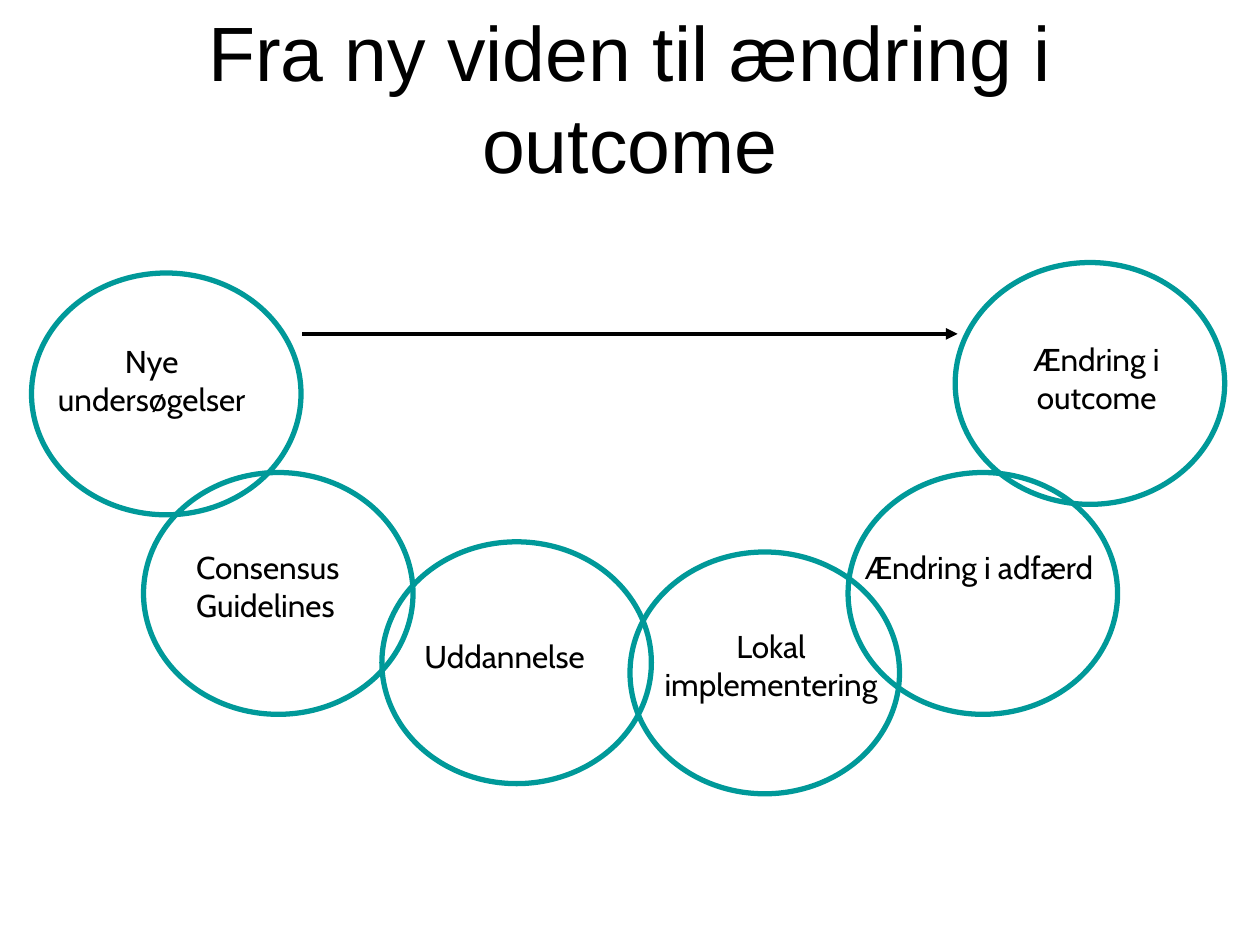
from dataclasses import dataclass

from lxml.etree import SubElement
from pptx import Presentation
from pptx.dml.color import RGBColor
from pptx.enum.shapes import MSO_CONNECTOR, MSO_SHAPE
from pptx.enum.text import MSO_ANCHOR, MSO_AUTO_SIZE, PP_ALIGN
from pptx.oxml.ns import qn
from pptx.util import Pt


@dataclass(frozen=True)
class Theme:
    ink: RGBColor = RGBColor(0x00, 0x00, 0x00)
    ring: RGBColor = RGBColor(0x00, 0x99, 0x99)
    paper: RGBColor = RGBColor(0xFF, 0xFF, 0xFF)
    title_font: str = "Arial"
    label_font: str = "Cabin"
    title_size: int = 44
    label_size: int = 18


theme = Theme()


def write(box, text, *, font=theme.label_font, size=theme.label_size,
          align=PP_ALIGN.CENTER, anchor=MSO_ANCHOR.TOP, wrap=True,
          fit=MSO_AUTO_SIZE.SHAPE_TO_FIT_TEXT):
    """Fill a box with one paragraph per line of text."""
    frame = box.text_frame
    frame.word_wrap = wrap
    frame.auto_size = fit
    frame.vertical_anchor = anchor
    for index, line in enumerate(text.split("\n")):
        para = frame.paragraphs[0] if index == 0 else frame.add_paragraph()
        para.alignment = align
        span = para.add_run()
        span.text = line
        span.font.name = font
        span.font.size = Pt(size)
        span.font.color.rgb = theme.ink


deck = Presentation()
deck.slide_width, deck.slide_height = Pt(720), Pt(540)
page = deck.slides.add_slide(deck.slide_layouts[5])
page.background.fill.solid()
page.background.fill.fore_color.rgb = theme.paper

title = page.shapes.title
title.left, title.top, title.width, title.height = Pt(36), Pt(21.6), Pt(648), Pt(90)
write(title, "Fra ny viden til ændring i outcome", font=theme.title_font,
      size=theme.title_size, anchor=MSO_ANCHOR.BOTTOM, fit=MSO_AUTO_SIZE.NONE)

# Rings in the order of the process, left to right
ring_width, ring_height = 154, 138.2
ring_corners = [(18, 156), (82, 270), (218.2, 309.6),
                (360, 315.4), (484.6, 270), (545.8, 150)]
for left, top in ring_corners:
    ring = page.shapes.add_shape(MSO_SHAPE.OVAL, Pt(left), Pt(top),
                                 Pt(ring_width), Pt(ring_height))
    ring.shadow.inherit = False
    ring.fill.background()
    ring.line.color.rgb = theme.ring
    ring.line.width = Pt(3)

# Text, left, top, width, height, format
labels = [
    ("Nye undersøgelser", 19.4, 192.2, 134.6, 50.4, {}),
    ("Consensus\nGuidelines", 105, 309.6, 98.6, 50.4,
     {"align": PP_ALIGN.LEFT, "wrap": False}),
    ("Uddannelse", 235.5, 360.7, 124.6, 28.8, {"align": PP_ALIGN.LEFT}),
    ("Lokal\nimplementering", 371.5, 355, 138.2, 50.4, {"wrap": False}),
    ("Ændring i adfærd", 484.6, 309.6, 149.8, 28.8, {}),
    ("Ændring i outcome", 570.2, 190.8, 113, 50.4, {}),
]
for text, left, top, width, height, style in labels:
    label = page.shapes.add_textbox(Pt(left), Pt(top), Pt(width), Pt(height))
    write(label, text, **style)

arrow = page.shapes.add_connector(MSO_CONNECTOR.STRAIGHT,
                                  Pt(172.8), Pt(190.8), Pt(547.2), Pt(190.8))
arrow.line.color.rgb = theme.ink
arrow.line.width = Pt(2.25)
SubElement(arrow.line._get_or_add_ln(), qn("a:tailEnd"), type="triangle")
SubElement(arrow._element.spPr, qn("a:effectLst"))

deck.save("out.pptx")
